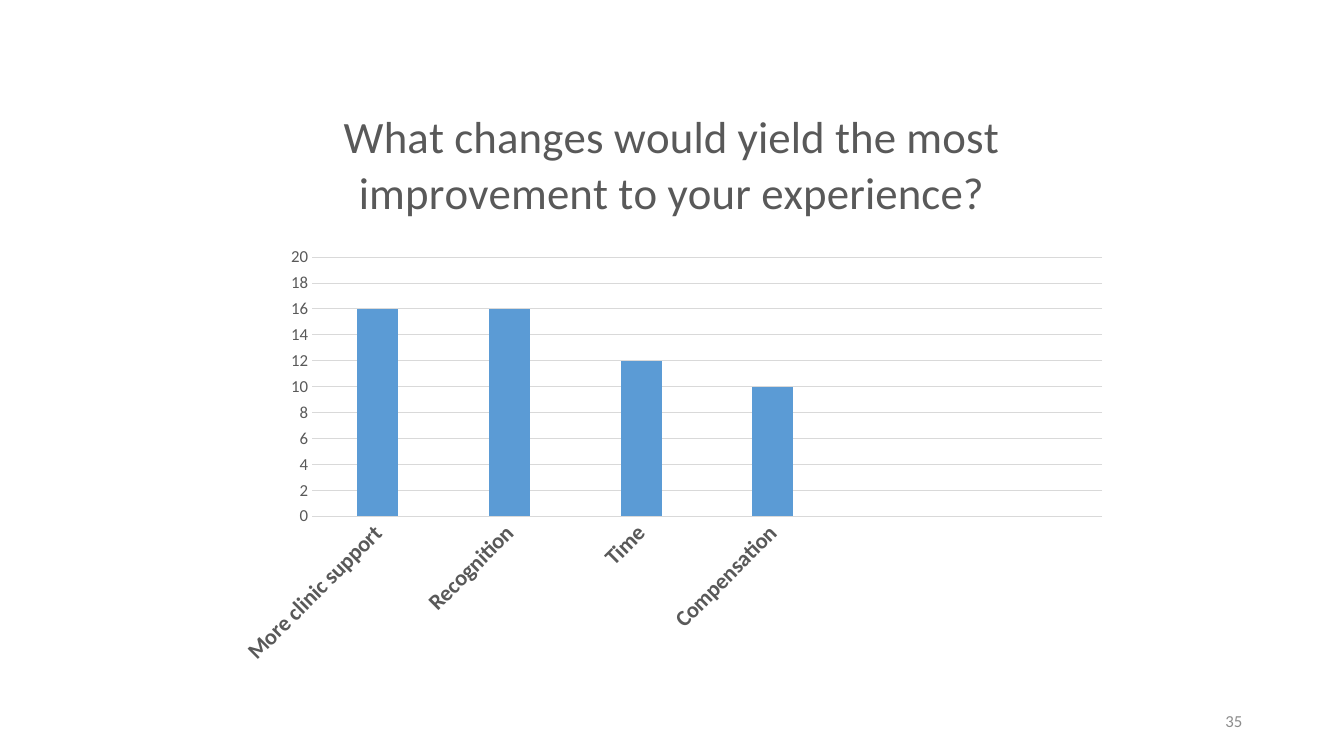
from pptx import Presentation
from pptx import util as u
from pptx.chart.data import CategoryChartData
from pptx.dml.color import RGBColor
from pptx.enum import chart as charts, text

WIDTH, HEIGHT = u.Inches(13.33), u.Inches(7.5)
FONT = "Calibri"
COLORS = {"bar": "5B9BD5", "label": "595959", "grid": "D9D9D9", "number": "8C8C8C"}
QUESTION = "What changes would yield the most improvement to your experience?"
ANSWERS = [
    ("More clinic support", 16),
    ("Recognition", 16),
    ("Time", 12),
    ("Compensation", 10),
    ("", None),
    ("", None),
]


def color(name):
    """Return the named palette colour."""
    return RGBColor.from_string(COLORS[name])


def style_font(font, size, name, bold=False):
    """Apply typeface, size, colour and weight to a font."""
    font.name, font.size, font.bold = FONT, u.Pt(size), bold
    font.color.rgb = color(name)


def style_line(line):
    """Draw a thin grid-coloured line."""
    line.color.rgb = color("grid")
    line.width = u.Pt(0.75)


def style_axes(chart):
    """Format both axes, the gridlines and the slanted category labels."""
    category, value = chart.category_axis, chart.value_axis
    for axis, size, bold in ((category, 16, True), (value, 12, False)):
        axis.major_tick_mark = axis.minor_tick_mark = charts.XL_TICK_MARK.NONE
        style_font(axis.tick_labels.font, size, "label", bold)
    style_line(category.format.line)
    category._element.txPr.bodyPr.set("rot", "-2700000")
    category._element.txPr.bodyPr.set("vert", "horz")
    value.format.line.fill.background()
    value.minimum_scale, value.maximum_scale, value.major_unit = 0, 20, 2
    value.has_major_gridlines = True
    style_line(value.major_gridlines.format.line)


def add_answer_chart(slide, left, top, width, height):
    """Place the titled column chart of answers in the given box."""
    data = CategoryChartData()
    data.categories = [answer for answer, _ in ANSWERS]
    data.add_series("Series 1", [votes for _, votes in ANSWERS])
    chart = slide.shapes.add_chart(
        charts.XL_CHART_TYPE.COLUMN_CLUSTERED, left, top, width, height, data
    ).chart
    chart.font.name, chart.font.size = FONT, u.Pt(10)
    chart.has_legend = False
    chart.has_title = True
    chart.chart_title.include_in_layout = False
    paragraph = chart.chart_title.text_frame.paragraphs[0]
    paragraph.text = QUESTION
    style_font(paragraph.runs[0].font, 32, "label")
    plot = chart.plots[0]
    plot.gap_width, plot.overlap, plot.vary_by_categories = 219, -27, False
    fill = plot.series[0].format.fill
    fill.solid()
    fill.fore_color.rgb = color("bar")
    style_axes(chart)


def add_slide_number(slide, left, top, width, height):
    """Place the right-aligned slide number in the given box."""
    frame = slide.shapes.add_textbox(left, top, width, height).text_frame
    frame.word_wrap = True
    frame.vertical_anchor = text.MSO_ANCHOR.MIDDLE
    frame.text = "35"
    paragraph = frame.paragraphs[0]
    paragraph.alignment = text.PP_ALIGN.RIGHT
    style_font(paragraph.runs[0].font, 12, "number")


def main():
    """Build and save the survey slide."""
    presentation = Presentation()
    presentation.slide_width, presentation.slide_height = WIDTH, HEIGHT
    slide = presentation.slides.add_slide(presentation.slide_layouts[6])
    add_answer_chart(slide, WIDTH // 6, u.Inches(0.79), WIDTH * 2 // 3, u.Inches(5.93))
    add_slide_number(slide, u.Inches(9.42), u.Inches(6.95), u.Inches(3), u.Inches(0.4))
    presentation.save("out.pptx")


if __name__ == "__main__":
    main()
